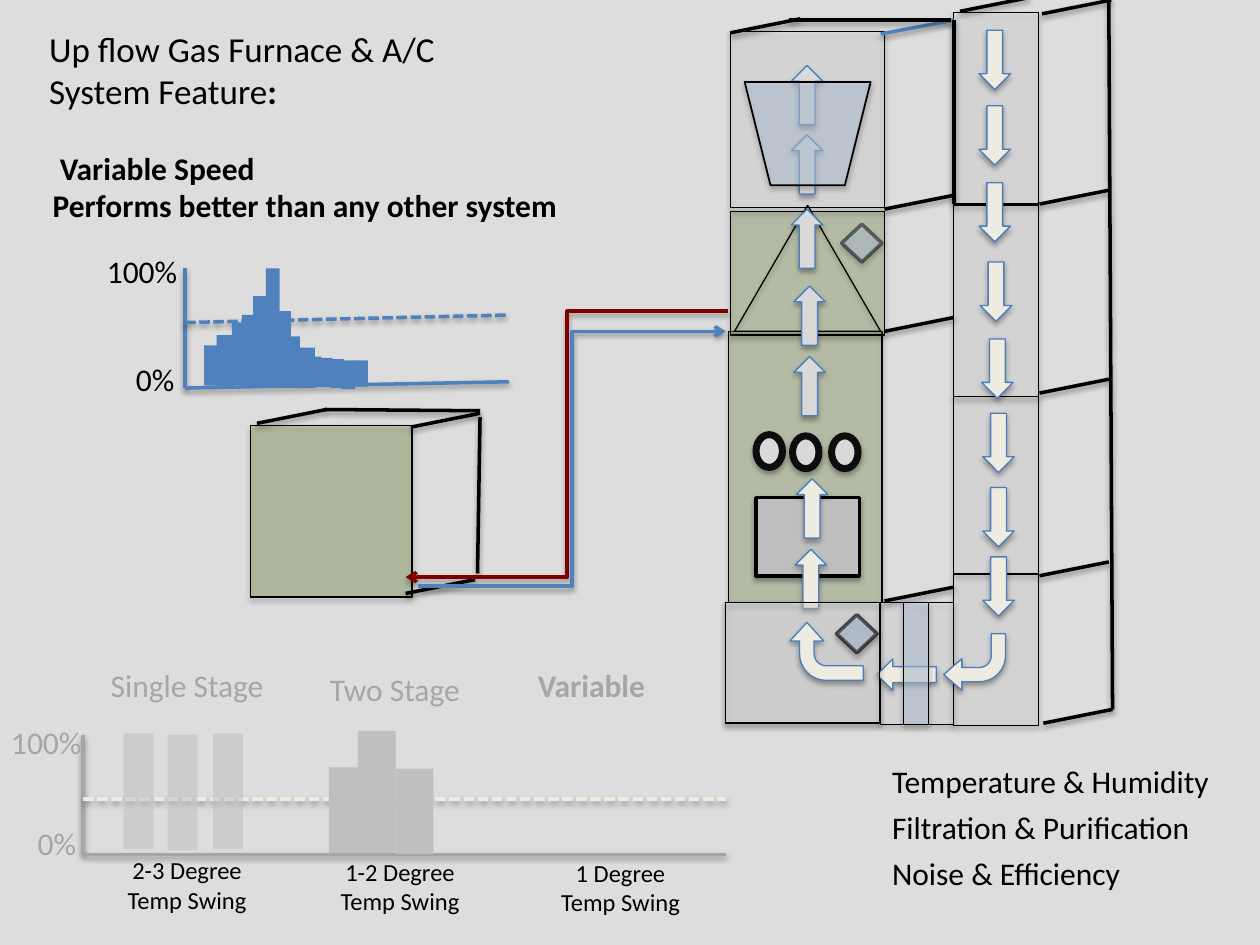
from pptx import Presentation
from pptx.dml.color import RGBColor
from pptx.enum.dml import MSO_LINE
from pptx.enum.shapes import MSO_CONNECTOR, MSO_SHAPE
from pptx.enum.text import MSO_ANCHOR, PP_ALIGN
from pptx.oxml.ns import qn
from pptx.util import Inches, Pt
from lxml.etree import SubElement

BLACK, BLUE, CREAM, GREY = "000000", "4F81BD", "EEECE1", "A6A6A6"
SILVER, GREEN, WHITE, ICE = "BFBFBF", "77933C", "F2F2F2", "C6D9F1"
RIM, PALE = "4B7EBC", "D9D9D9"


def paint(item, fill=None, alpha=100, line=None, width=0.75, shade=35, fade=100):
    props = item._element.spPr
    if fill:
        item.fill.solid()
        item.fill.fore_color.rgb = RGBColor.from_string(fill)
        SubElement(props.find(qn("a:solidFill"))[0], qn("a:alpha"), val=str(alpha * 1000))
    elif hasattr(item, "fill"):
        item.fill.background()
    if line:
        item.line.color.rgb = RGBColor.from_string(line)
        item.line.width = Pt(width)
        tint = props.find(qn("a:ln")).find(qn("a:solidFill"))[0]
        SubElement(tint, qn("a:alpha"), val=str(fade * 1000))
    else:
        item.line.fill.background()
    effects = SubElement(props, qn("a:effectLst"))
    if shade:
        cast = SubElement(effects, qn("a:outerShdw"), blurRad="40000", dist="23000",
                          dir="5400000", rotWithShape="0")
        dark = SubElement(cast, qn("a:srgbClr"), val=BLACK)
        SubElement(dark, qn("a:alpha"), val=str(shade * 1000))
    return item


def write(frame, text, size=18, color=BLACK, bold=False, align=PP_ALIGN.LEFT, wrap=False):
    frame.text = text
    frame.word_wrap = wrap
    frame.vertical_anchor = MSO_ANCHOR.TOP
    for para in frame.paragraphs:
        para.alignment = align
        for run in para.runs:
            font = run.font
            font.name, font.size, font.bold = "Calibri", Pt(size), bold
            font.color.rgb = RGBColor.from_string(color)


deck = Presentation()
deck.slide_width, deck.slide_height = Inches(10), Inches(7.5)
slide = deck.slides.add_slide(deck.slide_layouts[1])
slide.background.fill.solid()
slide.background.fill.fore_color.rgb = RGBColor.from_string("DDDDDD")
shapes = slide.shapes

title = shapes.title
title.left, title.top, title.width, title.height = map(Inches, (0.29, 0.17, 3.29, 0.77))
write(title.text_frame, "Up flow Gas Furnace & A/C\nSystem Feature", 20)
colon = title.text_frame.paragraphs[1].add_run()
colon.text = ":"
colon.font.name, colon.font.size, colon.font.bold = "Calibri", Pt(20), True

body = slide.placeholders[1]
body.left, body.top, body.width, body.height = map(Inches, (6.98, 6, 2.84, 1.14))
write(body.text_frame, "Temperature & Humidity\nFiltration & Purification\nNoise & Efficiency")
for para in body.text_frame.paragraphs:
    para.space_before, para.space_after = Pt(0), Pt(4.7)
    props = para._p.get_or_add_pPr()
    props.set("marL", "0")
    props.set("indent", "0")
    SubElement(props, qn("a:buNone"))

RECT, OVAL, DIAMOND = MSO_SHAPE.RECTANGLE, MSO_SHAPE.OVAL, MSO_SHAPE.DIAMOND
base = (RECT, 5.76, 4.78, 1.22, 0.96, WHITE, 30, BLACK, 0.75)
gem = (DIAMOND, 6.64, 4.88, 0.32, 0.3, ICE, 47, BLACK, 2, 35, 50)
unit = [
    (RECT, 5.78, 2.63, 1.22, 2.15, GREEN, 25, BLACK),
    (RECT, 5.8, 1.68, 1.22, 0.98, GREEN, 25, BLACK),
    (RECT, 7.57, 4.56, 0.67, 1.2, WHITE, 30, BLACK),
    (RECT, 7.57, 3.15, 0.67, 1.4, WHITE, 30, BLACK),
    (RECT, 7.57, 1.63, 0.67, 1.52, WHITE, 30, BLACK),
    (RECT, 7.57, 0.1, 0.67, 1.52, WHITE, 30, BLACK),
    (RECT, 6.99, 4.78, 0.58, 0.97, WHITE, 30, BLACK),
    (RECT, 5.8, 0.25, 1.22, 1.4, WHITE, 30, BLACK),
    (MSO_SHAPE.ISOSCELES_TRIANGLE, 5.83, 1.63, 1.16, 1, None, 100, BLACK),
    (RECT, 6, 3.95, 0.82, 0.62, SILVER, 100, BLACK, 2),
    base,
    (OVAL, 6, 3.45, 0.21, 0.26, PALE, 100, "0D0D0D", 4),
    (OVAL, 6.29, 3.46, 0.21, 0.26, PALE, 100, "0D0D0D", 4),
    (OVAL, 6.6, 3.46, 0.21, 0.26, PALE, 100, "0D0D0D", 4),
    (RECT, 1.99, 3.38, 1.28, 1.36, GREEN, 30, BLACK),
]
for kind, x, y, w, h, *look in unit:
    paint(shapes.add_shape(kind, *map(Inches, (x, y, w, h))), *look)

slants = [(7.02, 1.66), (7.02, 2.63), (7.02, 4.77), (8.25, 4.57), (8.25, 3.12),
          (8.28, 5.74), (8.25, 1.62), (8.27, 0.11), (7.62, 0.09), (5.8, 0.26),
          (3.22, 4.71), (3.26, 3.39), (2.04, 3.36)]
lines = [(x, y, x + 0.55, y - 0.11, BLACK) for x, y in slants] + [
    (6.99, 0.27, 7.57, 0.16, BLUE),
    (7.57, 0.16, 7.57, 1.62, BLACK),
    (6.26, 0.16, 7.55, 0.16, BLACK),
    (8.8, 0, 8.83, 5.63, BLACK),
    (3.81, 3.31, 3.79, 4.55, BLACK),
    (2.58, 3.25, 3.81, 3.26, BLACK),
    (1.47, 2.13, 1.47, 3.08, BLUE),
    (1.47, 3.08, 4.04, 3.03, BLUE),
    (1.47, 2.56, 4.04, 2.5, BLUE, True),
    (0.66, 5.83, 0.66, 6.78, GREY),
    (0.66, 6.78, 5.76, 6.78, GREY),
    (0.66, 6.34, 5.76, 6.34, CREAM, True),
]
for x, y, right, end, color, *dash in lines:
    edge = shapes.add_connector(MSO_CONNECTOR.STRAIGHT, *map(Inches, (x, y, right, end)))
    paint(edge, line=color, width=2, shade=38)
    if dash:
        edge.line.dash_style = MSO_LINE.SQUARE_DOT

arrows = [(7.77, y, 0, CREAM) for y in (0.24, 0.84, 1.45)]
arrows += [(7.78, 2.08, 0, CREAM), (7.79, 2.69, 0, CREAM)]
arrows += [(7.8, y, 0, CREAM) for y in (3.28, 3.87, 4.42)]
arrows += [(7.07, 5.12, 90, CREAM), (6.31, 4.36, 180, CREAM), (6.32, 3.8, 180, CREAM)]
arrows += [(6.3, y, 180, PALE) for y in (2.83, 2.27)]
arrows += [(6.28, y, 180, PALE) for y in (1.66, 1.07, 0.52)]
for x, y, turn, color in arrows:
    arrow = shapes.add_shape(MSO_SHAPE.DOWN_ARROW, *map(Inches, (x, y, 0.25, 0.47)))
    arrow.rotation = turn
    paint(arrow, color, line=RIM)

for x, y, right, end, color in [(5.78, 2.47, 3.22, 4.58, "800000"),
                                (3.32, 4.65, 5.76, 2.63, BLUE)]:
    pipe = shapes.add_connector(MSO_CONNECTOR.ELBOW, *map(Inches, (x, y, right, end)))
    paint(pipe, line=color, width=2, shade=38)
    SubElement(pipe._element.spPr.find(qn("a:ln")), qn("a:tailEnd"), type="arrow")

coil = shapes.add_shape(MSO_SHAPE.TRAPEZOID, *map(Inches, (5.91, 0.65, 1, 0.82)))
coil.rotation = 180
paint(coil, ICE, 47, BLACK, 1)

front = [(RECT, 7.17, 4.78, 0.2, 0.97, ICE, 47, BLACK), gem,
         (DIAMOND, 6.68, 1.78, 0.32, 0.3, ICE, 47, BLACK, 2, 35, 50), base]
for kind, x, y, w, h, *look in front:
    paint(shapes.add_shape(kind, *map(Inches, (x, y, w, h))), *look)

for x, y, w, h, turn, head in [(7.49, 5.03, 0.49, 0.45, 0, 0.28),
                               (6.33, 4.88, 0.46, 0.58, 90, 0.29)]:
    bend = shapes.add_shape(MSO_SHAPE.BENT_ARROW, *map(Inches, (x, y, w, h)))
    for i, value in enumerate((0.25, head, 0.32, 0.46)):
        bend.adjustments[i] = value
    bend.rotation = turn
    frame = bend._element.spPr.find(qn("a:xfrm"))
    frame.set("flipH", "1")
    frame.set("flipV", "1")
    paint(bend, CREAM, line=RIM)

kind, x, y, w, h, *look = gem
paint(shapes.add_shape(kind, *map(Inches, (x, y, w, h))), *look)

bars = [(1.62, 2.74, 0.14, 0.32), (1.72, 2.66, 0.14, 0.41), (1.84, 2.56, 0.11, 0.5),
        (1.92, 2.5, 0.11, 0.56), (2.01, 2.35, 0.11, 0.71), (2.11, 2.13, 0.11, 0.94),
        (2.2, 2.47, 0.11, 0.6), (2.44, 2.83, 0.11, 0.23), (2.24, 2.67, 0.14, 0.41),
        (2.36, 2.76, 0.14, 0.32), (2.53, 2.84, 0.11, 0.23), (2.62, 2.85, 0.11, 0.23),
        (2.71, 2.86, 0.11, 0.23), (2.81, 2.86, 0.11, 0.21)]
single = [(0.98, 5.82, 0.24, 0.92), (1.33, 5.83, 0.24, 0.92), (1.69, 5.82, 0.24, 0.92)]
double = [(2.61, 6.09, 0.3, 0.68), (2.84, 5.8, 0.3, 0.97), (3.14, 6.1, 0.3, 0.68)]
for group, color, alpha in [(bars, BLUE, 100), (single, SILVER, 50), (double, SILVER, 100)]:
    for box in group:
        paint(shapes.add_shape(RECT, *map(Inches, box)), color, alpha, shade=0)

MID = PP_ALIGN.CENTER
labels = [
    (0.32, 1.13, 5, 0.71, " Variable Speed\nPerforms better than any other system",
     18, BLACK, True, PP_ALIGN.LEFT, True),
    (0.75, 1.95, 0.77, 0.4, "100%"),
    (0.98, 2.81, 0.51, 0.4, "0%"),
    (-0.01, 5.69, 0.77, 0.4, "100%", 18, GREY),
    (0.2, 6.49, 0.51, 0.4, "0%", 18, GREY),
    (0.78, 5.24, 1.46, 0.4, "Single Stage", 18, GREY),
    (2.52, 5.27, 1.29, 0.4, "Two Stage", 18, GREY),
    (4.17, 5.24, 1.08, 0.4, "Variable", 18, GREY, True),
    (0.9, 6.74, 1.17, 0.57, "2-3 Degree\nTemp Swing", 14, BLACK, False, MID),
    (2.59, 6.75, 1.17, 0.57, "1-2 Degree\nTemp Swing", 14, BLACK, False, MID),
    (4.34, 6.76, 1.17, 0.57, "1 Degree\nTemp Swing", 14, BLACK, False, MID),
]
for x, y, w, h, *look in labels:
    write(shapes.add_textbox(*map(Inches, (x, y, w, h))).text_frame, *look)

deck.save("out.pptx")
